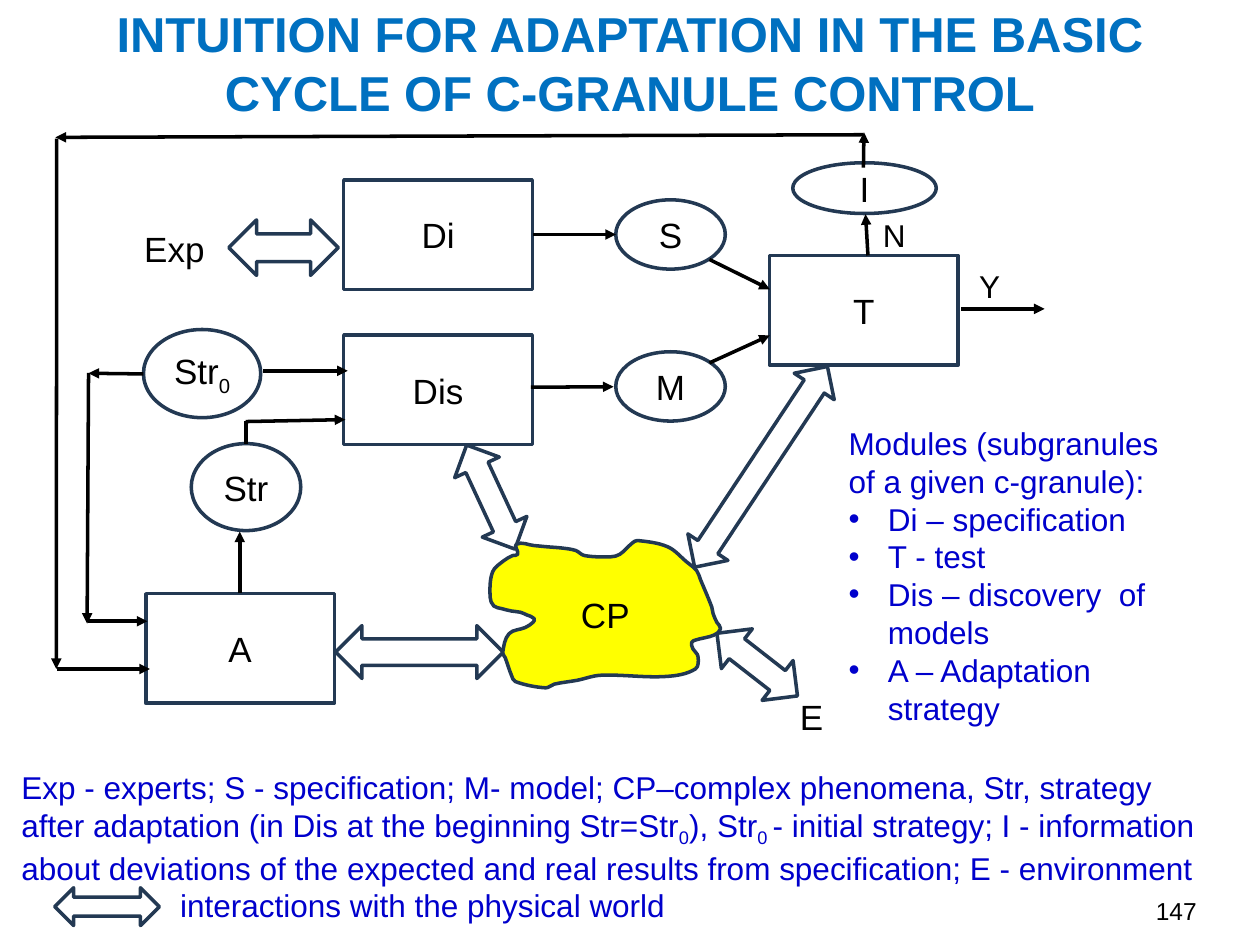
import math
import pptx
import pptx.util
import pptx.dml.color
import pptx.enum.shapes
import pptx.enum.text
import pptx.oxml.ns
from lxml import etree

Pt = pptx.util.Pt
qn = pptx.oxml.ns.qn
MSO = pptx.enum.shapes.MSO_SHAPE
ALIGN = pptx.enum.text.PP_ALIGN
ANCHOR = pptx.enum.text.MSO_ANCHOR
NAVY, BLACK, BLUE = "233953", "000000", "0000CC"


def rgb(hex_code):
    return pptx.dml.color.RGBColor.from_string(hex_code)


def write(sp, text, size=20, color=BLACK, bold=False, align=ALIGN.CENTER,
          anchor=ANCHOR.MIDDLE, wrap=True):
    """Newlines part paragraphs, a leading • makes a bullet, |x| is subscript."""
    tf = sp.text_frame
    tf.word_wrap = wrap
    tf.vertical_anchor = anchor
    for i, line in enumerate(text.split("\n")):
        p = tf.add_paragraph() if i else tf.paragraphs[0]
        p.alignment = align
        if line.startswith("•"):
            line = line[1:]
            pPr = p._p.get_or_add_pPr()
            pPr.set("marL", str(Pt(22.5)))
            pPr.set("indent", str(-Pt(22.5)))
            etree.SubElement(pPr, qn("a:buFont"), typeface="Arial")
            etree.SubElement(pPr, qn("a:buChar"), char="•")
        for j, part in enumerate(line.split("|")):
            if not part:
                continue
            r = p.add_run()
            r.text = part
            r.font.size = Pt(size)
            r.font.name = "Arial"
            r.font.bold = bold
            r.font.color.rgb = rgb(color)
            if j % 2:
                r._r.get_or_add_rPr().set("baseline", "-25000")


prs = pptx.Presentation()
prs.slide_width, prs.slide_height = Pt(720), Pt(540)
s = prs.slides.add_slide(prs.slide_layouts[6])

# Modules and data: kind, label, left, top, width, height
BOX, OVAL = MSO.RECTANGLE, MSO.OVAL
nodes = [
    (BOX, "Di", 196.4, 102.8, 107.8, 62.6),
    (BOX, "Dis", 196.4, 191.6, 107.8, 62.6),
    (BOX, "T", 439.7, 146, 107.8, 62.6),
    (BOX, "A", 83.3, 339.3, 107.8, 62.6),
    (OVAL, "S", 351.9, 114.2, 62.6, 39.6),
    (OVAL, "M", 351.9, 201, 62.6, 39.6),
    (OVAL, "I", 453, 93, 82, 29),
    (OVAL, "Str|0|", 82, 188.3, 67, 50.4),
    (OVAL, "Str", 109.3, 253.5, 62.6, 49.7),
]
shapes = []
for kind, label, x, y, w, h in nodes:
    sp = s.shapes.add_shape(kind, Pt(x), Pt(y), Pt(w), Pt(h))
    write(sp, label, wrap=False)
    shapes.append(sp)

# Interactions: left, top, width, height, rotation
interactions = [
    (50.4, 488.2, 21.6, 59.8, 270),     # legend
    (146.2, 110.2, 31.7, 62.6, 270),    # Exp - Di
    (266.4, 251.3, 28.1, 65.5, 335.1),  # Dis - CP
    (421.2, 198, 27.4, 137.5, 33.5),    # T - CP
    (418.3, 350.6, 28.8, 58.3, 307.9),  # CP - E
    (224.6, 324.7, 30.2, 95.8, 270),    # A - CP
]
for x, y, w, h, angle in interactions:
    sp = s.shapes.add_shape(MSO.UP_DOWN_ARROW, Pt(x), Pt(y), Pt(w), Pt(h))
    sp.rotation = angle
    shapes.append(sp)

# Complex phenomena: a smooth closed curve through these points
blob = [
    (295.2, 311), (305.3, 311.8), (312.5, 312.5), (321, 313.2), (329, 314.6),
    (334, 317.5), (349.2, 318.2), (354.2, 316.8), (361.4, 310.3),
    (364.3, 308.9), (381.6, 312.5), (392.4, 321.1), (398.2, 326.2),
    (400.3, 331.2), (406.8, 347), (407.5, 350.6), (409.7, 355.7),
    (411.8, 359.3), (408.2, 362.9), (397.4, 365.8), (395.3, 367.2),
    (396, 370.8), (398.9, 375.1), (397.4, 382.3), (380.9, 386.6),
    (343.4, 385.9), (329.8, 388.8), (316.8, 391), (311.8, 393.1),
    (294.5, 389.5), (292.3, 385.9), (288.7, 375.8), (287.3, 373),
    (290.9, 362.2), (300.2, 358.6), (304.6, 355.7), (305.3, 353.5),
    (301, 351.4), (297.4, 349.9), (292.3, 349.2), (286.6, 347.8),
    (282.2, 346.3), (280.1, 341.3), (281.5, 326.9), (288, 320.4),
    (293, 317.5), (295.9, 316.8),
]
pts = [(Pt(x), Pt(y)) for x, y in blob]
fb = s.shapes.build_freeform(*pts[0])
fb.add_line_segments(pts[1:] + pts[:1], close=True)
cp = fb.convert_to_shape()
for i, ln in enumerate(list(cp._element.iter(qn("a:lnTo")))):
    a, b, c, d = (pts[(i + k) % len(pts)] for k in (-1, 0, 1, 2))
    third = math.dist(b, c) / 3
    out, into = third / math.dist(a, c), third / math.dist(b, d)
    handles = [[b[k] + (c[k] - a[k]) * out for k in (0, 1)],
               [c[k] - (d[k] - b[k]) * into for k in (0, 1)]]
    ln.tag = qn("a:cubicBezTo")
    for j, (x, y) in enumerate(handles):
        pt = etree.Element(qn("a:pt"), x=str(round(x - cp.left)),
                           y=str(round(y - cp.top)))
        ln.insert(j, pt)
write(cp, "CP", wrap=False)

for sp in shapes + [cp]:
    sp.shadow.inherit = False
    sp.fill.background()
    sp.line.color.rgb = rgb(NAVY)
    sp.line.width = Pt(2)
cp.fill.solid()
cp.fill.fore_color.rgb = rgb("FFFF00")

# Flow: start x, start y, end x, end y, arrowhead at the end
flows = [
    (304.5, 134, 352, 134, True),        # Di - S
    (303.4, 221.3, 350.6, 221, True),    # Dis - M
    (405.4, 148.3, 439.9, 165.3, True),  # S - T
    (405.4, 207.4, 439.9, 191.7, True),  # M - T
    (549.4, 176.5, 596.9, 176.5, True),  # T - Y
    (496, 146, 494.6, 122.4, True),      # T - I
    (493.4, 95.8, 493.7, 75.6, True),    # I up
    (493.2, 77, 31.7, 78.5, True),       # feedback along the top
    (32.4, 79.2, 32.2, 382.3, True),
    (32.4, 382.3, 85.7, 382.3, True),
    (82, 213.7, 50.6, 213.3, True),      # Str0 - A
    (50.6, 213.1, 49.8, 356.4, True),
    (50.4, 355, 84.2, 355, True),
    (150.5, 211.9, 198.7, 211.9, True),  # Str0 - Dis
    (137, 339, 137, 303.8, True),        # A - Str
    (140.6, 253.5, 140.6, 240.5, False),  # Str - Dis
    (140.4, 240.9, 197.3, 239.8, True),
]
for x1, y1, x2, y2, arrow in flows:
    cn = s.shapes.add_connector(pptx.enum.shapes.MSO_CONNECTOR.STRAIGHT,
                                Pt(x1), Pt(y1), Pt(x2), Pt(y2))
    cn.line.color.rgb = rgb(BLACK)
    cn.line.width = Pt(2)
    if arrow:
        etree.SubElement(cn.line._get_or_add_ln(), qn("a:tailEnd"), type="triangle")
    etree.SubElement(cn._element.spPr, qn("a:effectLst"))

# Texts: wording, left, top, width, height, format
body = dict(size=18, color=BLUE, align=ALIGN.LEFT, anchor=ANCHOR.TOP)
label = dict(body, color=BLACK)
texts = [
    ("INTUITION FOR ADAPTATION IN THE BASIC CYCLE OF C-GRANULE CONTROL",
     8.6, 6.5, 702.7, 58.3, dict(size=28, color="0070C0", bold=True)),
    ("Exp", 68.4, 118.8, 62.6, 46.8, {}),
    ("Y", 552.4, 149, 40.3, 28.8, label),
    ("N", 497.5, 120.2, 40.3, 28.8, label),
    ("E", 450, 393.8, 40.3, 31.7, dict(label, size=20)),
    ("Modules (subgranules of a given c-granule):\n•Di – specification\n"
     "•T - test\n•Dis – discovery  of models\n•A – Adaptation strategy",
     477.8, 238.7, 198, 181.4, body),
    ("Exp - experts; S - specification; M- model; CP–complex phenomena, Str, "
     "strategy after adaptation (in Dis at the beginning Str=Str|0|), Str|0 |"
     "- initial strategy; I - information about deviations of the expected "
     "and real results from specification; E - environment",
     5.2, 435.2, 696.2, 72.7, body),
    ("interactions with the physical world", 95.8, 502.6, 298.8, 28.8, body),
    ("147", 641.9, 508.3, 49, 25.2, dict(label, size=14, align=ALIGN.RIGHT)),
]
for text, x, y, w, h, fmt in texts:
    write(s.shapes.add_textbox(Pt(x), Pt(y), Pt(w), Pt(h)), text, **fmt)

prs.save("out.pptx")
